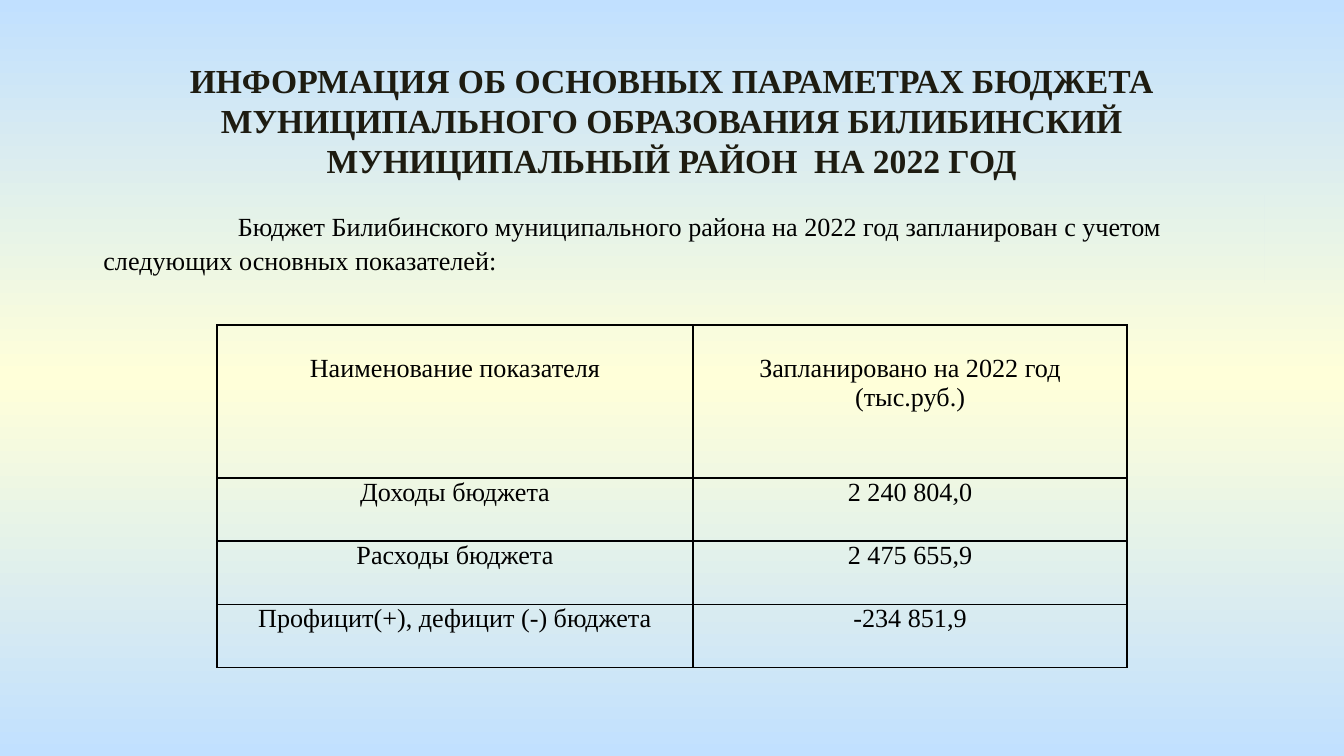
from copy import deepcopy

from lxml import etree
from pptx import Presentation
from pptx import util as u
from pptx.dml.color import RGBColor
from pptx.enum import text
from pptx.oxml import ns

COLORS = {"sky": "C1E0FF", "cream": "FFFFD9", "heading": "1E1C11", "ink": "000000"}
FONT = "Times New Roman"
INDICATORS = [
    ("Наименование показателя", "Запланировано на 2022 год (тыс.руб.)"),
    ("Доходы бюджета", "2 240 804,0"),
    ("Расходы бюджета", "2 475 655,9"),
    ("Профицит(+), дефицит (-) бюджета", "-234 851,9"),
]


def write(frame, wording, size, color, align, bold=False):
    frame.text = wording
    paragraph = frame.paragraphs[0]
    paragraph.alignment = align
    font = paragraph.runs[0].font
    font.name, font.size, font.bold = FONT, u.Pt(size), bold
    font.color.rgb = RGBColor.from_string(COLORS[color])
    return paragraph


def place(part, box):
    part.left, part.top, part.width, part.height = map(u.Cm, box)
    frame = part.text_frame
    frame.word_wrap = True
    frame.auto_size = text.MSO_AUTO_SIZE.NONE
    frame.vertical_anchor = text.MSO_ANCHOR.TOP
    return frame


def paint_background(slide):
    fill = slide.background.fill
    fill.gradient()
    fill.gradient_angle = 90
    stop_list = next(slide.element.iter(ns.qn("a:gsLst")))
    stop_list.append(deepcopy(stop_list[0]))
    bands = ((0, "sky"), (0.5, "cream"), (1, "sky"))
    for stop, (position, color) in zip(fill.gradient_stops, bands):
        stop.position = position
        stop.color.rgb = RGBColor.from_string(COLORS[color])


def add_heading(slide, box):
    frame = place(slide.shapes.title, box)
    heading = write(
        frame,
        "ИНФОРМАЦИЯ ОБ ОСНОВНЫХ ПАРАМЕТРАХ БЮДЖЕТА МУНИЦИПАЛЬНОГО ОБРАЗОВАНИЯ "
        "БИЛИБИНСКИЙ МУНИЦИПАЛЬНЫЙ РАЙОН  НА 2022 ГОД",
        18, "heading", text.PP_ALIGN.CENTER, bold=True)
    heading.line_spacing = 1.0


def add_introduction(slide, box):
    body = slide.placeholders[1]
    body.element.set("useBgFill", "1")
    frame = place(body, box)
    frame.margin_top = u.Cm(0.22)
    introduction = write(
        frame,
        "Бюджет Билибинского муниципального района на 2022 год запланирован "
        "с учетом следующих основных показателей:",
        14, "ink", text.PP_ALIGN.LEFT)
    introduction.space_before = u.Pt(0)
    introduction.line_spacing = 1.08
    properties = introduction._p.get_or_add_pPr()
    properties.set("marL", "0")
    properties.set("indent", str(u.Cm(2.54)))
    etree.SubElement(properties, ns.qn("a:buNone"))


def outline(cell):
    properties = cell._tc.get_or_add_tcPr()
    for position, side in enumerate(("lnL", "lnR", "lnT", "lnB")):
        border = etree.Element(ns.qn(f"a:{side}"), w=str(u.Pt(1)))
        fill = etree.SubElement(border, ns.qn("a:solidFill"))
        etree.SubElement(fill, ns.qn("a:srgbClr"), val=COLORS["ink"])
        properties.insert(position, border)


def add_indicators(slide, box):
    left, top, width, height = map(u.Cm, box)
    table = slide.shapes.add_table(len(INDICATORS), 2, left, top, width, height).table
    table.first_row = table.horz_banding = False
    table.columns[0].width = u.Cm(9)
    table.columns[1].width = width - u.Cm(9)
    header_height = u.Cm(2.89)
    for index, (row, entries) in enumerate(zip(table.rows, INDICATORS)):
        row.height = header_height if index == 0 else (height - header_height) // 3
        for cell, entry in zip(row.cells, entries):
            write(cell.text_frame, entry, 14, "ink", text.PP_ALIGN.CENTER)
            cell.margin_left = cell.margin_right = u.Cm(0.18)
            cell.margin_top = u.Cm(0.55 if index == 0 else 0)
            cell.margin_bottom = 0
            cell.fill.background()
            outline(cell)


def main():
    deck = Presentation()
    deck.slide_width, deck.slide_height = u.Cm(25.4), u.Cm(14.28)
    slide = deck.slides.add_slide(deck.slide_layouts[1])
    paint_background(slide)
    add_heading(slide, (0.9, 1, 23.6, 2.56))
    add_introduction(slide, (1.7, 3.7, 22.2, 1.63))
    add_indicators(slide, (4.1, 6.14, 17.2, 6.47))
    deck.save("out.pptx")


if __name__ == "__main__":
    main()
